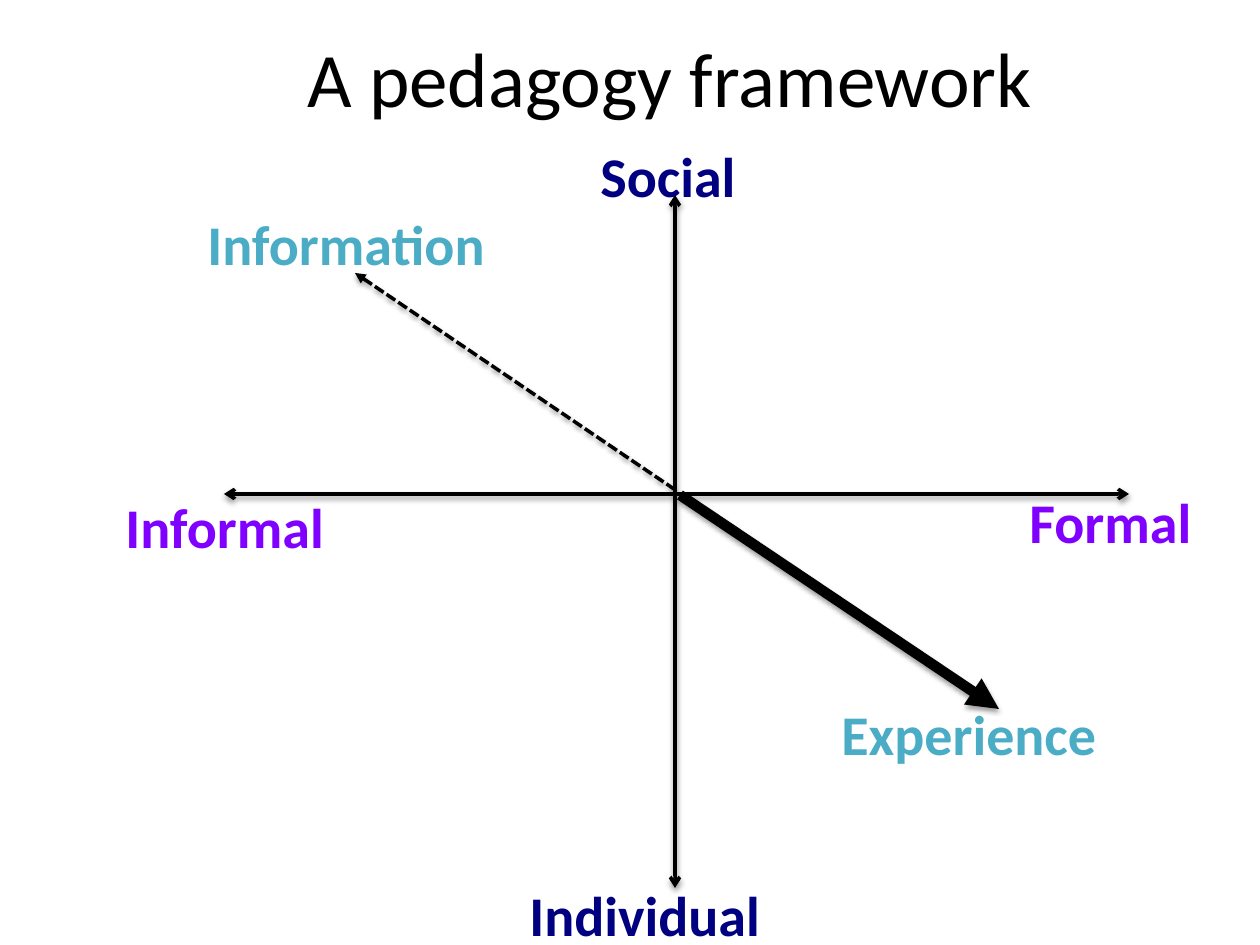
from dataclasses import dataclass

from lxml import etree
from pptx import Presentation
from pptx.dml.color import RGBColor
from pptx.enum.dml import MSO_LINE
from pptx.enum.shapes import MSO_CONNECTOR
from pptx.enum.text import MSO_ANCHOR, MSO_AUTO_SIZE, PP_ALIGN
from pptx.oxml.ns import qn
from pptx.util import Emu, Pt

STRAIGHT = MSO_CONNECTOR.STRAIGHT
DASH = MSO_LINE.SQUARE_DOT
MIDDLE = MSO_ANCHOR.MIDDLE
GROW = MSO_AUTO_SIZE.SHAPE_TO_FIT_TEXT
CENTER = PP_ALIGN.CENTER
PX_PER_INCH = 126
LABEL_HEIGHT = 81


@dataclass(frozen=True)
class Theme:
    """Colours, font and sizes of the slide."""
    font: str = "Calibri"
    ink: str = "000000"
    social: str = "000080"
    formality: str = "8000FF"
    mode: str = "4BACC6"
    title_size: int = 44
    label_size: int = 32
    thin: int = 2
    thick: int = 6


THEME = Theme()


def px(n):
    """Turn pixels into EMU."""
    return Emu(round(n * 914400 / PX_PER_INCH))


def place(s, left, top, width, height):
    """Move and size a shape in pixels."""
    s.left, s.top, s.width, s.height = map(px, (left, top, width, height))


def style(p, size, color, bold=False):
    """Set the font of a paragraph."""
    p.font.name = THEME.font
    p.font.size = Pt(size)
    p.font.bold = bold
    p.font.color.rgb = RGBColor.from_string(color)


def set_title(slide, text):
    """Fill and place the title placeholder."""
    s = slide.shapes.title
    place(s, 103, -2, 1134, 157)
    tf = s.text_frame
    tf.text = text
    tf.vertical_anchor = MIDDLE
    p = tf.paragraphs[0]
    p.alignment = CENTER
    style(p, THEME.title_size, THEME.ink)


def add_label(group, text, left, top, width, color):
    """Add a bold label."""
    s = group.shapes.add_textbox(*map(px, (left, top, width, LABEL_HEIGHT)))
    tf = s.text_frame
    tf.word_wrap = True
    tf.auto_size = GROW
    tf.text = text
    style(tf.paragraphs[0], THEME.label_size, color, bold=True)


def add_shadow(s):
    """Give a line a soft shadow below it."""
    effects = etree.SubElement(s._element.spPr, qn("a:effectLst"))
    shadow = etree.SubElement(effects, qn("a:outerShdw"), blurRad=str(Pt(3.1)),
                              dist=str(Pt(1.6)), dir="5400000", rotWithShape="0")
    color = etree.SubElement(shadow, qn("a:srgbClr"), val=THEME.ink)
    etree.SubElement(color, qn("a:alpha"), val="38000")


def add_arrow(group, start, end, width, head=None, tail=None, dash=None):
    """Add a shadowed line with arrowheads at its start and end."""
    s = group.shapes.add_connector(STRAIGHT, *map(px, (*start, *end)))
    s.line.width = Pt(width)
    s.line.color.rgb = RGBColor.from_string(THEME.ink)
    if dash:
        s.line.dash_style = dash
    for tag, kind in (("a:headEnd", head), ("a:tailEnd", tail)):
        if kind:
            etree.SubElement(s.line._ln, qn(tag), type=kind)
    add_shadow(s)


def add_axis(slide, start, end, labels, color):
    """Add a double-headed axis with its labels."""
    group = slide.shapes.add_group_shape()
    add_arrow(group, start, end, THEME.thin, "arrow", "arrow")
    for label in labels:
        add_label(group, *label, color)


def add_modes(slide):
    """Add the diagonal from information to experience."""
    group = slide.shapes.add_group_shape()
    add_arrow(group, (355, 273), (674, 489), THEME.thin, head="triangle", dash=DASH)
    add_arrow(group, (680, 495), (999, 709), THEME.thick, tail="triangle")
    add_label(group, "Information", 195, 203, 314, THEME.mode)
    add_label(group, "Experience", 829, 693, 335, THEME.mode)


def main():
    """Build and save the slide."""
    prs = Presentation()
    prs.slide_width, prs.slide_height = px(1260), px(945)
    slide = prs.slides.add_slide(prs.slide_layouts[5])
    set_title(slide, "A pedagogy framework")
    add_axis(slide, (675, 195), (675, 888),
             [("Social", 588, 135, 197), ("Individual", 517, 874, 333)], THEME.social)
    add_axis(slide, (224, 494), (1129, 494),
             [("Informal", 113, 486, 251), ("Formal", 1017, 481, 221)], THEME.formality)
    add_modes(slide)
    prs.save("out.pptx")


if __name__ == "__main__":
    main()
